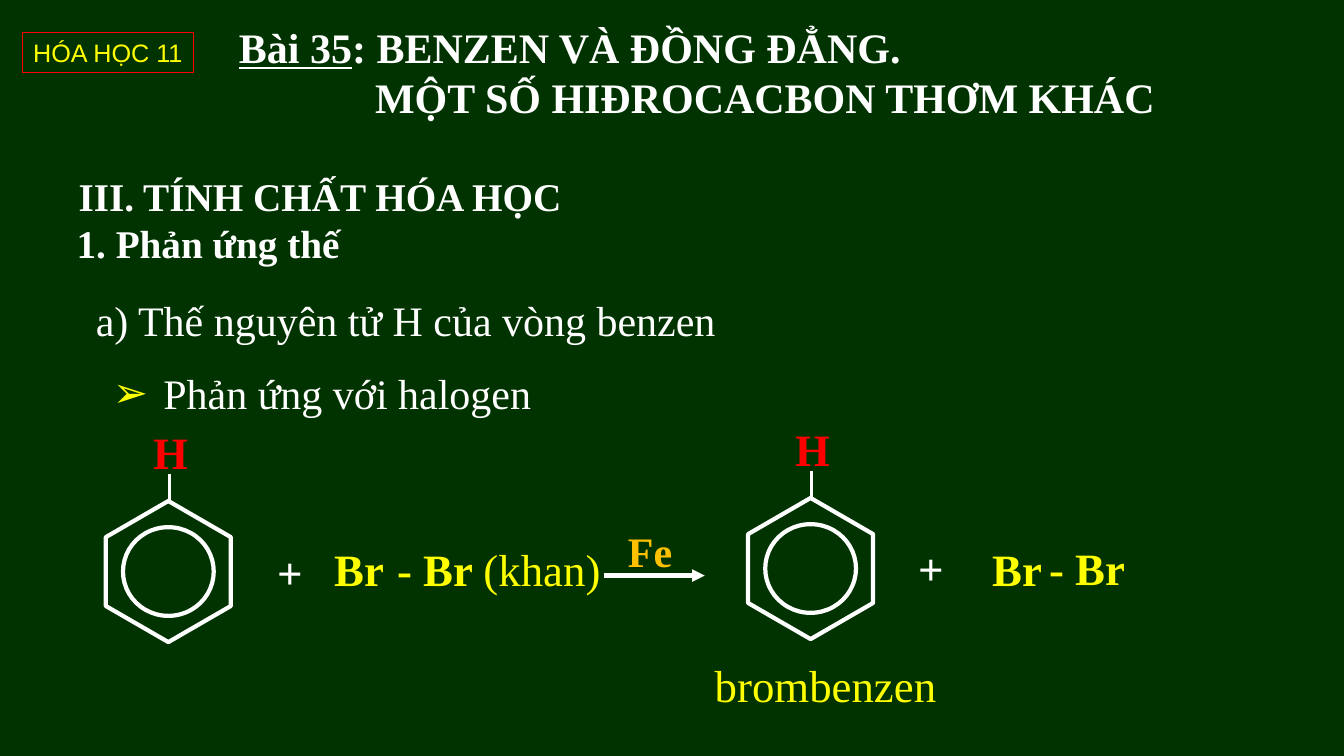
from pptx import Presentation
from pptx.dml.color import RGBColor
from pptx.enum.shapes import MSO_CONNECTOR, MSO_SHAPE
from pptx.enum.text import MSO_ANCHOR, MSO_AUTO_SIZE, PP_ALIGN
from pptx.oxml.ns import qn
from pptx.util import Inches, Pt
from lxml.etree import SubElement

GREEN = RGBColor(0x00, 0x33, 0x00)
WHITE = RGBColor(0xFF, 0xFF, 0xFF)
YELLOW = RGBColor(0xFF, 0xFF, 0x00)
RED = RGBColor(0xFF, 0x00, 0x00)
AMBER = RGBColor(0xFF, 0xC0, 0x00)
SERIF = "Times New Roman"

TAG = "HÓA HỌC 11"
HEAD = {"size": Pt(30), "bold": True, "color": WHITE}
TITLE = [  # left margin, runs
    (0, [("Bài 35", {"underline": True}), (": BENZEN VÀ ĐỒNG ĐẲNG.", {})]),
    (1.35, [("MỘT SỐ HIĐROCACBON THƠM KHÁC", {})]),
]
OUTLINE = [  # text, size, bold, left margin, space before, bullet
    ("III. TÍNH CHẤT HÓA HỌC", 28, True, 0.02, 0, None),
    ("1. Phản ứng thế", 28, True, 0, 0, None),
    ("a) Thế nguyên tử H của vòng benzen", 30, False, 0.19, 20, None),
    ("Phản ứng với halogen", 30, False, 0.86, 16, "➢"),
]
RINGS = [(1.67, 5.67), (8.04, 5.64)]  # centres
LABELS = [  # left, top, width, size, colour, runs of text and weight
    (2.65, 5.35, 0.66, 32, WHITE, [("+", True)]),
    (3.22, 5.33, 0.70, 32, YELLOW, [("Br", True)]),
    (3.84, 5.33, 2.24, 32, YELLOW, [("- Br ", True), ("(khan)", False)]),
    (6.13, 5.16, 0.65, 30, AMBER, [("Fe", True)]),
    (9.01, 5.32, 0.66, 32, WHITE, [("+", True)]),
    (9.75, 5.33, 0.70, 32, YELLOW, [("Br", True)]),
    (10.31, 5.32, 0.96, 32, YELLOW, [("- Br", True)]),
    (6.99, 6.48, 2.42, 32, YELLOW, [("brombenzen", False)]),
]

deck = Presentation()
deck.slide_width, deck.slide_height = Inches(13.33), Inches(7.5)
slide = deck.slides.add_slide(deck.slide_layouts[1])
slide.background.fill.solid()
slide.background.fill.fore_color.rgb = GREEN
shapes = slide.shapes


def write(par, text, color, name=SERIF, **form):
    font = par.add_run().font
    par.runs[-1].text = text
    font.color.rgb = color
    for key, value in {"name": name, **form}.items():
        setattr(font, key, value)


def place(holder, *box):
    """Move a placeholder and return its text frame, set from the top."""
    for key, value in zip(("left", "top", "width", "height"), box):
        setattr(holder, key, Inches(value))
    frame = holder.text_frame
    frame.auto_size = MSO_AUTO_SIZE.NONE
    frame.vertical_anchor = MSO_ANCHOR.TOP
    return frame


def lines(frame, count):
    """Return count left-aligned paragraphs of the frame."""
    for _ in range(count - 1):
        frame.add_paragraph()
    for par in frame.paragraphs:
        par.alignment = PP_ALIGN.LEFT
    return frame.paragraphs


def indent(par, left, first=0, bullet=None):
    props = par._p.get_or_add_pPr()
    props.set("marL", str(Inches(left)))
    props.set("indent", str(Inches(first)))
    if bullet:
        tint = SubElement(props, qn("a:buClr"))
        SubElement(tint, qn("a:srgbClr"), val=str(YELLOW))
        SubElement(props, qn("a:buChar"), char=bullet)
    else:
        SubElement(props, qn("a:buNone"))


def outline(kind, box, color, width):
    shape = shapes.add_shape(kind, *map(Inches, box))
    shape.shadow.inherit = False
    shape.fill.background()
    shape.line.color.rgb = color
    shape.line.width = Pt(width)
    return shape


def stroke(x1, y1, x2, y2, width, arrow=False):
    line = shapes.add_connector(MSO_CONNECTOR.STRAIGHT,
                                *map(Inches, (x1, y1, x2, y2)))
    line.line.color.rgb = WHITE
    line.line.width = Pt(width)
    if arrow:
        SubElement(line.line._get_or_add_ln(), qn("a:tailEnd"), type="triangle")
    SubElement(line._element.spPr, qn("a:effectLst"))


def label(left, top, width, size, color, runs):
    box = shapes.add_textbox(*map(Inches, (left, top, width, 0.64)))
    box.text_frame.word_wrap = False
    for text, bold in runs:
        write(box.text_frame.paragraphs[0], text, color, size=Pt(size), bold=bold)


def benzene(x, y):
    wide, high = 1.4, 1.24
    ring = outline(MSO_SHAPE.HEXAGON,
                   (x - wide / 2, y - high / 2, wide, high), WHITE, 3)
    ring.adjustments[0] = 0.289
    ring.rotation = 270
    outline(MSO_SHAPE.OVAL, (x - 0.45, y - 0.44, 0.9, 0.88), WHITE, 3)
    stroke(x + 0.01, y - 0.97, x + 0.01, y - 0.69, 2)
    label(x - 0.25, y - 1.51, 0.55, 32, RED, [("H", True)])


frame = place(shapes.title, 2.27, 0.16, 9.59, 1.11)
for par, (left, runs) in zip(lines(frame, len(TITLE)), TITLE):
    indent(par, left)
    for text, form in runs:
        write(par, text, **HEAD, **form)

frame = place(slide.placeholders[1], 0.66, 1.66, 10, 2.49)
for par, row in zip(lines(frame, len(OUTLINE)), OUTLINE):
    text, size, bold, left, gap, bullet = row
    par.space_before = Pt(gap)
    indent(par, left, -0.5 if bullet else 0, bullet)
    write(par, text, WHITE, size=Pt(size), bold=bold)

tag = outline(MSO_SHAPE.RECTANGLE, (0.22, 0.32, 1.7, 0.4), RED, 0.75)
tag.text_frame.word_wrap = False
write(tag.text_frame.paragraphs[0], TAG, YELLOW, "Arial", size=Pt(18))

for center in RINGS:
    benzene(*center)
for row in LABELS:
    label(*row)
stroke(5.99, 5.71, 6.99, 5.71, 3, arrow=True)

deck.save("out.pptx")
